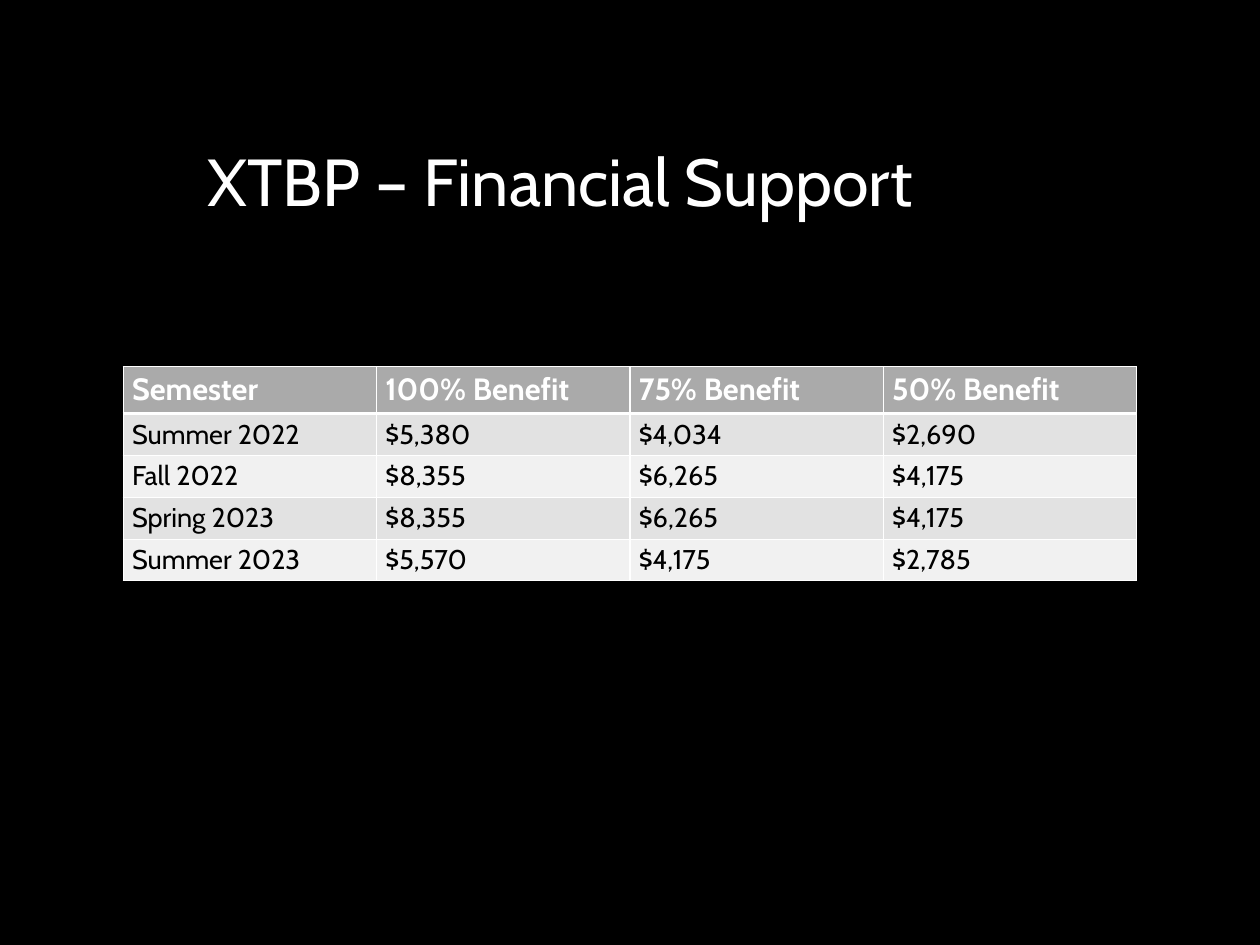
from lxml.etree import SubElement
from pptx import Presentation
from pptx.dml.color import RGBColor
from pptx.enum.text import MSO_ANCHOR, MSO_AUTO_SIZE, PP_ALIGN
from pptx.oxml.ns import qn
from pptx.util import Emu, Pt

WHITE, BLACK, HEADER_GREY = "FFFFFF", "000000", "AAAAAA"
BANDS = ("E2E2E2", "F1F1F1")


def px(length):
    """100 px to the inch."""
    return Emu(length * 9144)


def color(hex_string):
    return RGBColor.from_string(hex_string)


class SlideBuilder:
    font_name = "Cabin"

    def __init__(self, deck, background):
        self.slide = deck.slides.add_slide(deck.slide_layouts[5])
        fill = self.slide.background.fill
        fill.solid()
        fill.fore_color.rgb = color(background)

    def add_run(self, paragraph, text, size, hex_color, bold=False):
        run = paragraph.add_run()
        run.text = text
        run.font.name = self.font_name
        run.font.size = Pt(size)
        run.font.bold = bold
        run.font.color.rgb = color(hex_color)

    def title(self, text, left, top, width, height, size):
        heading = self.slide.shapes.title
        heading.left, heading.top = px(left), px(top)
        heading.width, heading.height = px(width), px(height)
        frame = heading.text_frame
        frame.word_wrap = True
        frame.auto_size = MSO_AUTO_SIZE.NONE
        frame.vertical_anchor = MSO_ANCHOR.TOP
        frame.margin_top = px(8)
        paragraph = frame.paragraphs[0]
        paragraph.alignment = PP_ALIGN.CENTER
        self.add_run(paragraph, text, size, WHITE)

    def borders(self, cell, bottom_width):
        properties = cell._tc.get_or_add_tcPr()
        widths = {"a:lnL": 1, "a:lnR": 1, "a:lnT": 1, "a:lnB": bottom_width}
        for side, width in widths.items():
            line = SubElement(properties, qn(side), w=str(Pt(width)))
            line_fill = SubElement(line, qn("a:solidFill"))
            SubElement(line_fill, qn("a:srgbClr"), val=WHITE)

    def cell(self, cell, text, is_header, fill):
        self.borders(cell, 3 if is_header else 1)
        cell.fill.solid()
        cell.fill.fore_color.rgb = color(fill)
        size, hex_color = (25, WHITE) if is_header else (22, BLACK)
        paragraph = cell.text_frame.paragraphs[0]
        self.add_run(paragraph, text, size, hex_color, is_header)

    def table(self, rows, left, top, column_width, header_height, row_height):
        columns = len(rows[0])
        height = header_height + row_height * (len(rows) - 1)
        table = self.slide.shapes.add_table(
            len(rows), columns, px(left), px(top),
            px(column_width * columns), px(height)).table
        table.horz_banding = False
        for column in table.columns:
            column.width = px(column_width)
        for i, values in enumerate(rows):
            is_header = i == 0
            table.rows[i].height = px(header_height if is_header else row_height)
            fill = HEADER_GREY if is_header else BANDS[(i - 1) % 2]
            for j, value in enumerate(values):
                self.cell(table.cell(i, j), value, is_header, fill)


def main():
    deck = Presentation()
    deck.slide_width, deck.slide_height = px(1422), px(1067)
    support = SlideBuilder(deck, BLACK)

    # Heading
    support.title("XTBP – Financial Support", 61, 150, 1142, 150, size=54)

    # Benefit per semester
    benefits = [
        ("Semester", "100% Benefit", "75% Benefit", "50% Benefit"),
        ("Summer 2022", "$5,380", "$4,034", "$2,690"),
        ("Fall 2022", "$8,355", "$6,265", "$4,175"),
        ("Spring 2023", "$8,355", "$6,265", "$4,175"),
        ("Summer 2023", "$5,570", "$4,175", "$2,785"),
    ]
    support.table(benefits, 139, 414, column_width=286,
                  header_height=53, row_height=47)

    deck.save("out.pptx")


if __name__ == "__main__":
    main()
